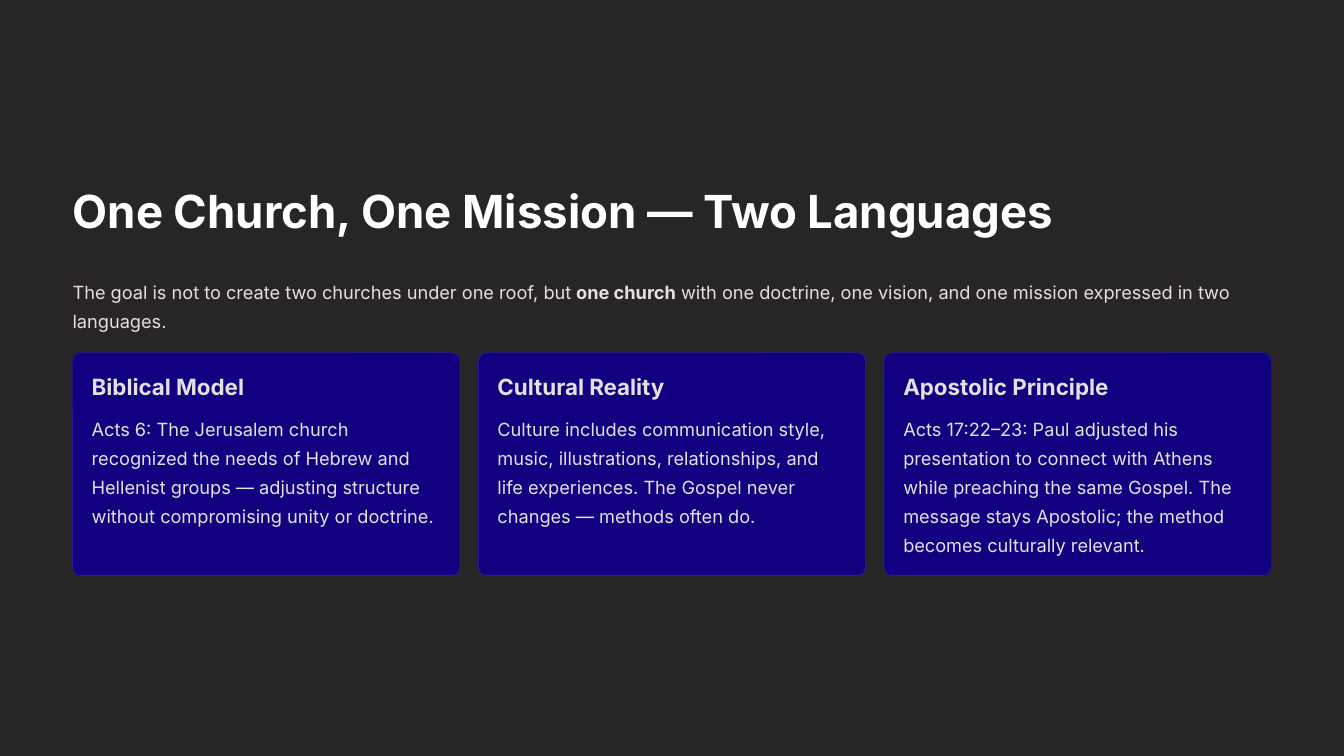
import pptx
import pptx.util
import pptx.dml.color
import pptx.enum.shapes
import pptx.enum.text

Cm = pptx.util.Cm

COLOURS = {
    "background": "272525",
    "title": "FFFFFF",
    "text": "E5E0DF",
    "card": "110080",
    "card line": "2A1999",
}
CARDS = [
    ("Biblical Model",
     "Acts 6: The Jerusalem church recognized the needs of Hebrew and Hellenist "
     "groups — adjusting structure without compromising unity or doctrine."),
    ("Cultural Reality",
     "Culture includes communication style, music, illustrations, relationships, "
     "and life experiences. The Gospel never changes — methods often do."),
    ("Apostolic Principle",
     "Acts 17:22–23: Paul adjusted his presentation to connect with Athens while "
     "preaching the same Gospel. The message stays Apostolic; the method becomes "
     "culturally relevant."),
]


def colour(name):
    return pptx.dml.color.RGBColor.from_string(COLOURS[name])


def write_text(shape, runs, size=13, colour_name="text", line_spacing=1.33, wrap=True):
    """Fill a shape with one paragraph made of (text, bold) runs."""
    frame = shape.text_frame
    frame.margin_left = frame.margin_top = frame.margin_right = frame.margin_bottom = 0
    frame.auto_size = pptx.enum.text.MSO_AUTO_SIZE.NONE
    frame.vertical_anchor = pptx.enum.text.MSO_ANCHOR.TOP
    frame.word_wrap = wrap
    paragraph = frame.paragraphs[0]
    paragraph.alignment = pptx.enum.text.PP_ALIGN.LEFT
    paragraph.line_spacing = line_spacing
    paragraph.space_before = pptx.util.Pt(0)
    for text, bold in runs:
        run = paragraph.add_run()
        run.text = text
        run.font.name = "Inter"
        run.font.size = pptx.util.Pt(size)
        run.font.bold = bold
        run.font.color.rgb = colour(colour_name)


def add_header(slide, left, top, width):
    # Title
    title = slide.shapes.title
    title.left, title.top, title.width, title.height = left, top, width, Cm(1.45)
    write_text(title, [("One Church, One Mission — Two Languages", True)],
               size=32.5, colour_name="title", line_spacing=1.04, wrap=False)
    # Introduction
    introduction = slide.shapes.add_textbox(left, top + Cm(2.36), width, Cm(1.47))
    write_text(introduction, [
        ("The goal is not to create two churches under one roof, but ", False),
        ("one church", True),
        (" with one doctrine, one vision, and one mission expressed in two languages.", False),
    ])


def add_card(slide, left, top, width, height, heading, body):
    # Panel
    panel = slide.shapes.add_shape(
        pptx.enum.shapes.MSO_SHAPE.ROUNDED_RECTANGLE, left, top, width, height)
    panel.adjustments[0] = 0.034
    panel.shadow.inherit = False
    panel.fill.solid()
    panel.fill.fore_color.rgb = colour("card")
    panel.line.color.rgb = colour("card line")
    panel.line.width = pptx.util.Pt(0.5)
    # Heading and body
    inset = Cm(0.48)
    text_width = width - 2 * inset
    heading_box = slide.shapes.add_textbox(left + inset, top + inset, text_width, Cm(0.71))
    write_text(heading_box, [(heading, True)], size=16, line_spacing=1.04, wrap=False)
    body_top = Cm(1.47)
    body_box = slide.shapes.add_textbox(
        left + inset, top + body_top, text_width, height - body_top - inset)
    write_text(body_box, [(body, False)])


def add_card_row(slide, left, top, width, height):
    gap = Cm(0.47)
    card_width = (width - gap * (len(CARDS) - 1)) // len(CARDS)
    for index, (heading, body) in enumerate(CARDS):
        add_card(slide, left + index * (card_width + gap), top, card_width, height,
                 heading, body)


def main():
    presentation = pptx.Presentation()
    presentation.slide_width = Cm(33.87)
    presentation.slide_height = Cm(19.05)
    slide = presentation.slides.add_slide(presentation.slide_layouts.get_by_name("Title Only"))
    slide.background.fill.solid()
    slide.background.fill.fore_color.rgb = colour("background")

    margin = Cm(1.83)
    content_width = presentation.slide_width - 2 * margin
    add_header(slide, margin, Cm(4.55), content_width)
    add_card_row(slide, margin, Cm(8.89), content_width, Cm(5.61))
    presentation.save("out.pptx")


if __name__ == "__main__":
    main()
